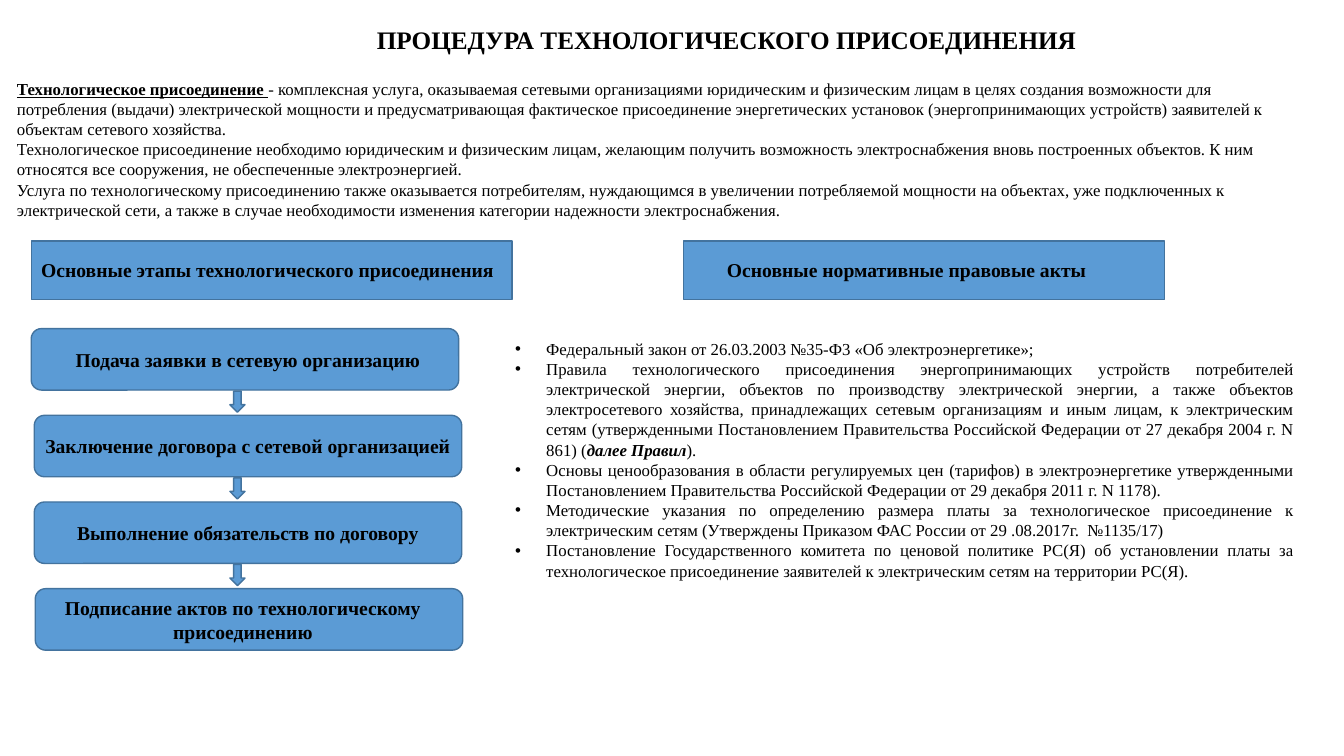
import pptx
import pptx.util
import pptx.dml.color
import pptx.enum.shapes
import pptx.enum.text
import pptx.oxml.ns
from dataclasses import dataclass
from lxml import etree

Inches = pptx.util.Inches
Kind = pptx.enum.shapes.MSO_SHAPE
Align = pptx.enum.text.PP_ALIGN
Anchor = pptx.enum.text.MSO_ANCHOR


@dataclass(frozen=True)
class Theme:
    font: str = "Times New Roman"
    ink: str = "000000"
    fill: str = "5B9BD5"
    edge: str = "43739E"
    title: int = 18
    head: int = 14
    body: int = 12


THEME = Theme()

# Each paragraph is a list of (text, style letters)
INTRO = [
    [("Технологическое присоединение ", "bu"),
     ("- комплексная услуга, оказываемая сетевыми организациями юридическим и физическим лицам "
      "в целях создания возможности для потребления (выдачи) электрической мощности и "
      "предусматривающая фактическое присоединение энергетических установок (энергопринимающих "
      "устройств) заявителей к объектам сетевого хозяйства.", "")],
    [("Технологическое присоединение необходимо юридическим и физическим лицам, желающим получить "
      "возможность электроснабжения вновь построенных объектов. К ним относятся все сооружения, "
      "не обеспеченные электроэнергией.", "")],
    [("Услуга по технологическому присоединению также оказывается потребителям, нуждающимся в "
      "увеличении потребляемой мощности на объектах, уже подключенных к электрической сети, а "
      "также в случае необходимости изменения категории надежности электроснабжения.", "")],
]
ACTS = [
    [("Федеральный закон от 26.03.2003 №35-Ф3 «Об электроэнергетике»;", "")],
    [("Правила технологического присоединения энергопринимающих устройств потребителей "
      "электрической энергии, объектов по производству электрической энергии, а также объектов "
      "электросетевого хозяйства, принадлежащих сетевым организациям и иным лицам, к "
      "электрическим сетям (утвержденными Постановлением Правительства Российской Федерации от "
      "27 декабря 2004 г. N 861) (", ""), ("далее Правил", "bi"), (").", "")],
    [("Основы ценообразования в области регулируемых цен (тарифов) в электроэнергетике "
      "утвержденными Постановлением Правительства Российской Федерации от 29 декабря 2011 г. "
      "N 1178).", "")],
    [("Методические указания по определению размера платы за технологическое присоединение к "
      "электрическим сетям (Утверждены Приказом ФАС России от 29 .08.2017г.  №1135/17)", "")],
    [("Постановление Государственного комитета по ценовой политике РС(Я) об установлении платы за "
      "технологическое присоединение заявителей к электрическим сетям на территории РС(Я).", "")],
]
# Left edge, shift of the text from the centre, label
STAGES = [
    (0.31, 0.03, "Подача заявки в сетевую организацию"),
    (0.34, 0, "Заключение договора с сетевой организацией"),
    (0.34, 0, "Выполнение обязательств по договору"),
    (0.35, -0.06, "Подписание актов по технологическому присоединению"),
]
# Left edge, text inset, label
HEADS = [
    (0.31, 0.1, "Основные этапы технологического присоединения"),
    (6.78, 0.43, "Основные нормативные правовые акты"),
]


def add_runs(para, runs, size):
    for text, style in runs:
        run = para.add_run()
        run.text = text
        font = run.font
        font.name = THEME.font
        font.size = pptx.util.Pt(size)
        font.color.rgb = pptx.dml.color.RGBColor.from_string(THEME.ink)
        font.bold = "b" in style
        font.italic = "i" in style
        font.underline = "u" in style


def add_text(slide, box, paras, size, align=Align.LEFT, dots=False):
    frame = slide.shapes.add_textbox(*map(Inches, box)).text_frame
    frame.word_wrap = True
    for i, runs in enumerate(paras):
        para = frame.paragraphs[0] if i == 0 else frame.add_paragraph()
        para.alignment = align
        if dots:
            add_dot(para)
        add_runs(para, runs, size)


def add_dot(para):
    props = para._p.get_or_add_pPr()
    props.set("marL", str(Inches(0.31)))
    props.set("indent", str(Inches(-0.31)))
    qn = pptx.oxml.ns.qn
    etree.SubElement(props, qn("a:buFont")).set("typeface", "Arial")
    etree.SubElement(props, qn("a:buChar")).set("char", "•")


def add_block(slide, kind, box):
    block = slide.shapes.add_shape(kind, *map(Inches, box))
    block.shadow.inherit = False
    block.fill.solid()
    block.fill.fore_color.rgb = pptx.dml.color.RGBColor.from_string(THEME.fill)
    block.line.color.rgb = pptx.dml.color.RGBColor.from_string(THEME.edge)
    block.line.width = pptx.util.Pt(1)
    return block


def add_label(block, text, align, left=0, right=0):
    frame = block.text_frame
    frame.word_wrap = True
    frame.vertical_anchor = Anchor.MIDDLE
    frame.margin_left, frame.margin_right = Inches(left), Inches(right)
    frame.margin_top = frame.margin_bottom = 0
    para = frame.paragraphs[0]
    para.alignment = align
    add_runs(para, [(text, "b")], THEME.head)


def add_stages(slide):
    top, step = 3.26, 0.86
    for i, (left, shift, text) in enumerate(STAGES):
        y = top + i * step
        block = add_block(slide, Kind.ROUNDED_RECTANGLE, (left, y, 4.24, 0.61))
        add_label(block, text, Align.CENTER, max(2 * shift, 0), max(-2 * shift, 0))
        if i < len(STAGES) - 1:
            add_block(slide, Kind.DOWN_ARROW, (2.28, y + 0.62, 0.15, 0.21))


def main():
    deck = pptx.Presentation()
    deck.slide_width, deck.slide_height = Inches(13.33), Inches(7.5)
    slide = deck.slides.add_slide(deck.slide_layouts[6])

    # Title and introduction
    add_text(slide, (3.64, 0.19, 8.67, 0.4),
             [[("ПРОЦЕДУРА ТЕХНОЛОГИЧЕСКОГО ПРИСОЕДИНЕНИЯ", "b")]], THEME.title)
    add_text(slide, (0.07, 0.73, 12.59, 1.51), INTRO, THEME.body)

    # Column headings
    for left, inset, text in HEADS:
        block = add_block(slide, Kind.RECTANGLE, (left, 2.39, 4.77, 0.58))
        add_label(block, text, Align.LEFT, inset)

    # Stages on the left, legal acts on the right
    add_stages(slide)
    add_text(slide, (5.01, 3.31, 7.93, 2.76), ACTS, THEME.body, Align.JUSTIFY, dots=True)

    deck.save("out.pptx")


if __name__ == "__main__":
    main()
